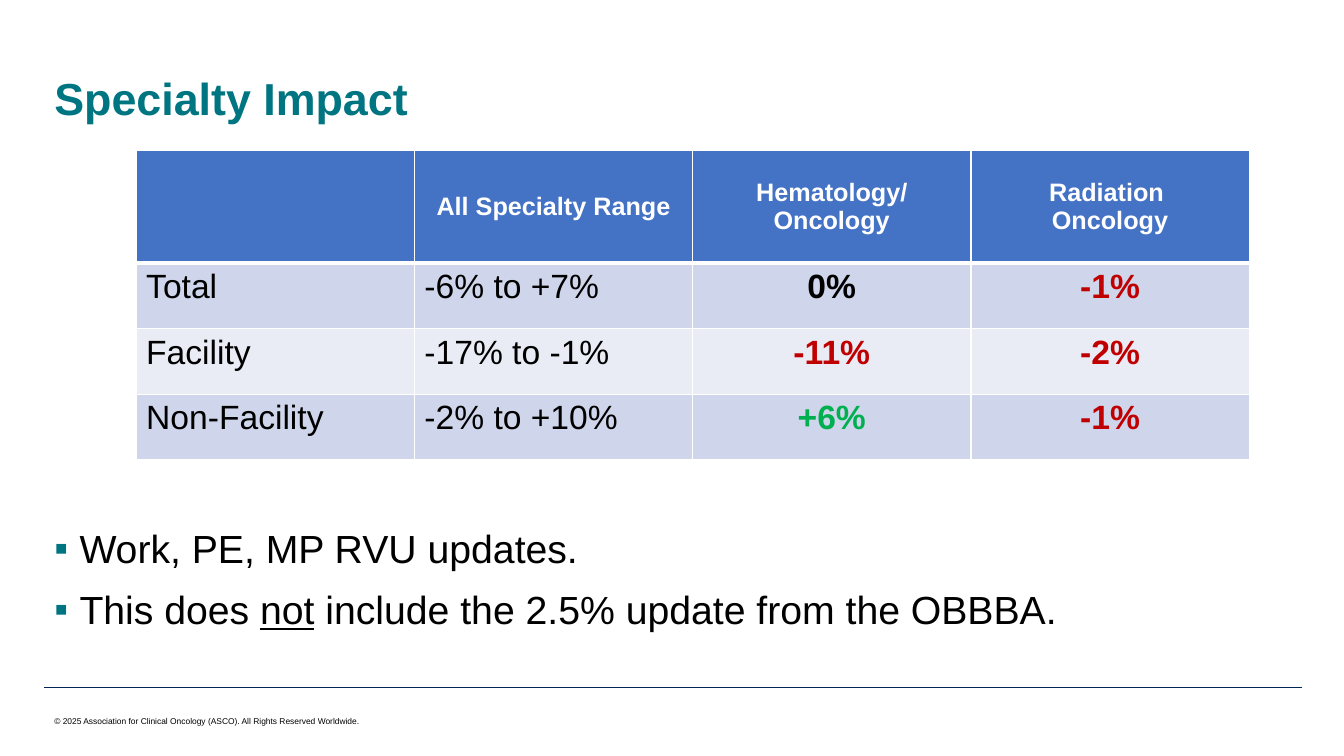
from lxml import etree
from pptx import Presentation
from pptx import util as u
from pptx.dml.color import RGBColor
from pptx.enum import shapes, text
from pptx.oxml.ns import qn

PX = 9144  # EMU per px, 100 px to the inch
FONT = "Arial"
TEAL, NAVY, BLACK, WHITE = "007582", "002557", "000000", "FFFFFF"
RED, GREEN = "C00000", "00B050"
HEADER_FILL, BAND_FILLS = "4472C4", ("CFD5EA", "E9EBF5")

HEADINGS = ["", "All Specialty Range", "Hematology/\nOncology", "Radiation \nOncology"]
IMPACTS = [
    ["Total", "-6% to +7%", "0%", "-1%"],
    ["Facility", "-17% to -1%", "-11%", "-2%"],
    ["Non-Facility", "-2% to +10%", "+6%", "-1%"],
]
NOTES = [
    [("Work, PE, MP RVU updates.", False)],
    [("This does ", False), ("not", True), (" include the 2.5% update from the OBBBA.", False)],
]


def px(length):
    return u.Emu(length * PX)


def colour(value):
    return RGBColor.from_string(value)


def set_font(para, size, value, bold=False):
    para.font.name = FONT
    para.font.size = u.Pt(size)
    para.font.bold = bold
    para.font.color.rgb = colour(value)


def add_text_box(page, box, wrap=True):
    frame = page.shapes.add_textbox(*map(px, box)).text_frame
    frame.word_wrap = wrap
    return frame


def add_title(page, box):
    frame = add_text_box(page, box)
    frame.vertical_anchor = text.MSO_ANCHOR.BOTTOM
    para = frame.paragraphs[0]
    para.text = "Specialty Impact"
    para.line_spacing = 0.9
    set_font(para, 32, TEAL, bold=True)


def set_borders(cell, bottom_width):
    properties = cell._tc.get_or_add_tcPr()
    for side, width in (("L", 1), ("R", 1), ("T", 1), ("B", bottom_width)):
        line = etree.SubElement(properties, qn(f"a:ln{side}"), w=str(u.Pt(width)))
        fill = etree.SubElement(line, qn("a:solidFill"))
        etree.SubElement(fill, qn("a:srgbClr"), val=WHITE)


def fill_cell(cell, words, fill, size, value, bold, centred, bottom_width=1):
    set_borders(cell, bottom_width)
    cell.fill.solid()
    cell.fill.fore_color.rgb = colour(fill)
    cell.text = words
    for para in cell.text_frame.paragraphs:
        para.alignment = text.PP_ALIGN.CENTER if centred else text.PP_ALIGN.LEFT
        set_font(para, size, value, bold)


def impact_colour(words):
    return {"-": RED, "+": GREEN}.get(words[0], BLACK)


def add_impact_table(page, box, header_height=112):
    height = box[3]
    rows, columns = len(IMPACTS) + 1, len(HEADINGS)
    table = page.shapes.add_table(rows, columns, *map(px, box)).table
    table.first_row = table.horz_banding = False
    table.rows[0].height = px(header_height)
    for row in range(1, rows):
        table.rows[row].height = px((height - header_height) // len(IMPACTS))
    for column, heading in enumerate(HEADINGS):
        cell = table.cell(0, column)
        fill_cell(cell, heading, HEADER_FILL, 18, WHITE, True, True, bottom_width=3)
        cell.vertical_anchor = text.MSO_ANCHOR.MIDDLE
    for row, impacts in enumerate(IMPACTS):
        for column, words in enumerate(impacts):
            is_impact = column >= 2
            value = impact_colour(words) if is_impact else BLACK
            fill_cell(table.cell(row + 1, column), words, BAND_FILLS[row % 2],
                      24, value, is_impact, is_impact)


def add_bullet(para, indent):
    properties = para._p.get_or_add_pPr()
    properties.set("marL", str(px(indent)))
    properties.set("indent", str(-px(indent)))
    bullet_colour = etree.SubElement(properties, qn("a:buClr"))
    etree.SubElement(bullet_colour, qn("a:srgbClr"), val=TEAL)
    etree.SubElement(properties, qn("a:buFont"), typeface=FONT)
    etree.SubElement(properties, qn("a:buChar"), char="▪")


def add_notes(page, box):
    """Bulleted remarks under the table."""
    frame = add_text_box(page, box)
    for index, note in enumerate(NOTES):
        para = frame.add_paragraph() if index else frame.paragraphs[0]
        if index:
            para.space_before = u.Pt(10)
        add_bullet(para, 25)
        set_font(para, 28, BLACK)
        for words, underlined in note:
            span = para.add_run()
            span.text = words
            if underlined:
                span.font.underline = True


def add_footer(page, box):
    """Rule along the top of the box, copyright line below it."""
    left, top, width, height = box
    rule = page.shapes.add_connector(
        shapes.MSO_CONNECTOR.STRAIGHT, px(left), px(top), px(left + width), px(top))
    rule.line.color.rgb = colour(NAVY)
    rule.line.width = u.Pt(0.25)
    etree.SubElement(rule._element.spPr, qn("a:effectLst"))
    frame = add_text_box(page, (left, top + height - 20, 330, 20), wrap=False)
    para = frame.paragraphs[0]
    para.text = "© 2025 Association for Clinical Oncology (ASCO). All Rights Reserved Worldwide."
    set_font(para, 6, BLACK)


def main():
    deck = Presentation()
    deck.slide_width, deck.slide_height = px(1333), px(750)
    page = deck.slides.add_slide(deck.slide_layouts[6])
    add_footer(page, (44, 682, 1247, 44))
    add_title(page, (44, 24, 1245, 105))
    add_notes(page, (44, 515, 1245, 149))
    add_impact_table(page, (135, 149, 1104, 307))
    deck.save("out.pptx")


if __name__ == "__main__":
    main()
